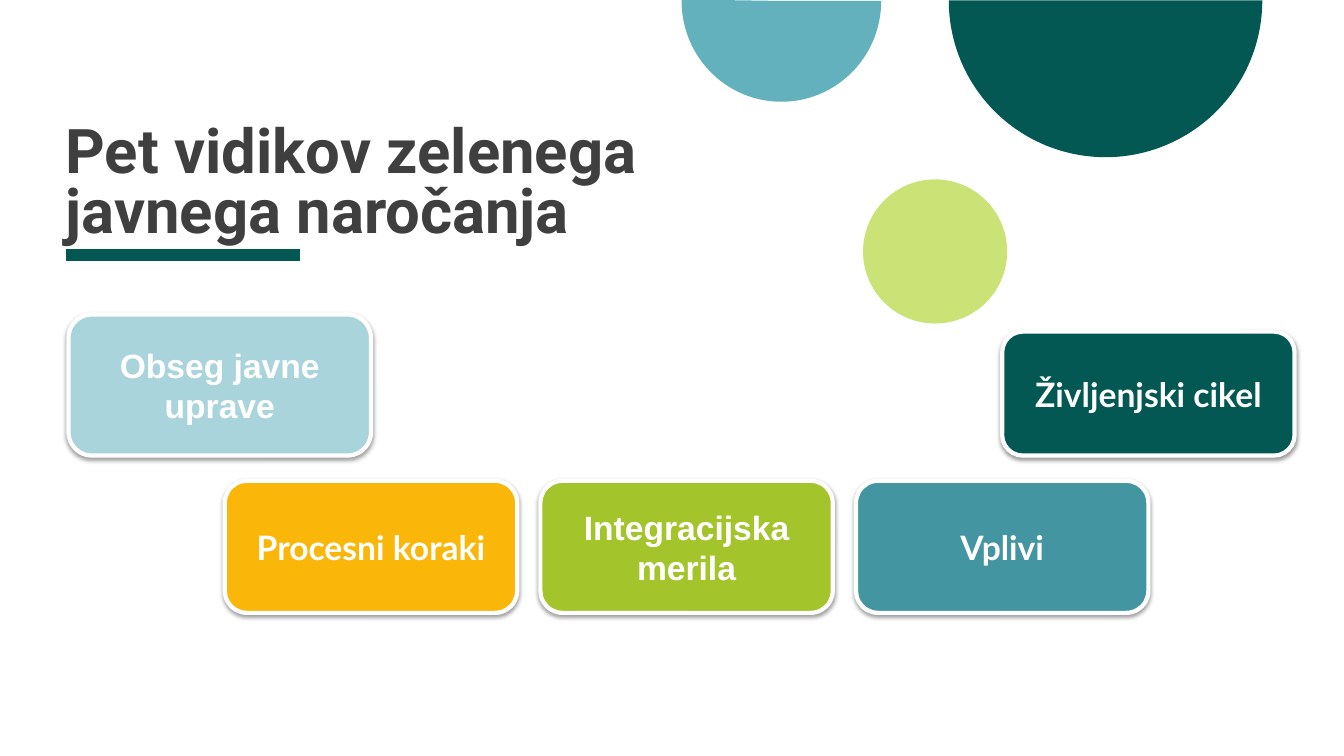
from dataclasses import dataclass

from lxml import etree
from pptx import Presentation
from pptx.dml.color import RGBColor
from pptx.enum.shapes import MSO_CONNECTOR, MSO_SHAPE
from pptx.enum.text import MSO_ANCHOR, MSO_AUTO_SIZE, PP_ALIGN
from pptx.oxml import parse_xml
from pptx.oxml.ns import qn
from pptx.util import Inches, Pt

PIE = MSO_SHAPE.PIE
ELLIPSE = MSO_SHAPE.OVAL
CARD = MSO_SHAPE.FLOWCHART_ALTERNATE_PROCESS
STRAIGHT = MSO_CONNECTOR.STRAIGHT
LEFT, CENTER = PP_ALIGN.LEFT, PP_ALIGN.CENTER
MIDDLE, BOTTOM = MSO_ANCHOR.MIDDLE, MSO_ANCHOR.BOTTOM
NO_AUTOFIT = MSO_AUTO_SIZE.NONE

WHITE = RGBColor(0xFF, 0xFF, 0xFF)
CHARCOAL = RGBColor(0x3F, 0x3F, 0x3F)
DARK_GREEN = RGBColor(0x03, 0x58, 0x54)
SKY = RGBColor(0x64, 0xB1, 0xBE)
LIME = RGBColor(0xCB, 0xE2, 0x77)
GREEN = RGBColor(0xA3, 0xC4, 0x2A)
TEAL = RGBColor(0x44, 0x95, 0xA2)
PALE_BLUE = RGBColor(0xA9, 0xD4, 0xDB)
AMBER = RGBColor(0xFA, 0xB6, 0x09)

ROW_LEFT, ROW_TOP, ROW_STEP = 2.23, 4.77, 3.13
CARD_WIDTH, CARD_HEIGHT = 2.9, 1.31

CARD_SHADOW = (
    '<a:outerShdw xmlns:a="http://schemas.openxmlformats.org/drawingml/2006/main" '
    'blurRad="40000" dist="20000" dir="5400000" rotWithShape="0">'
    '<a:srgbClr val="000000"><a:alpha val="38000"/></a:srgbClr></a:outerShdw>'
)


@dataclass(frozen=True)
class Disc:
    left: float
    top: float
    width: float
    height: float
    color: RGBColor
    kind: MSO_SHAPE = PIE
    sweep: float = 108


@dataclass(frozen=True)
class Aspect:
    label: str
    color: RGBColor
    font: str
    left: float
    top: float = ROW_TOP
    width: float = CARD_WIDTH
    height: float = CARD_HEIGHT


DISCS = (
    Disc(9.41, -1.55, 3.11, 3.11, DARK_GREEN),
    Disc(6.76, -0.99, 1.98, 2, SKY, sweep=108.52),
    Disc(8.56, 1.78, 1.43, 1.43, LIME, ELLIPSE),
)

ASPECTS = (
    Aspect("Obseg javne uprave", PALE_BLUE, "Arial", 0.68, 3.12, 3, 1.4),
    Aspect("Procesni koraki", AMBER, "Lato", ROW_LEFT),
    Aspect("Integracijska merila", GREEN, "Arial", ROW_LEFT + ROW_STEP),
    Aspect("Vplivi", TEAL, "Lato", ROW_LEFT + 2 * ROW_STEP),
    Aspect("Življenjski cikel", DARK_GREEN, "Lato", 9.94, 3.29, height=1.23),
)


def write_text(shape, text: str, *, font: str, size: float, color: RGBColor,
               align=CENTER, anchor=MIDDLE, margins=(0.1, 0.05),
               line_spacing: float = 1.0) -> None:
    frame = shape.text_frame
    frame.word_wrap = True
    frame.auto_size = NO_AUTOFIT
    frame.vertical_anchor = anchor
    frame.margin_left = frame.margin_right = Inches(margins[0])
    frame.margin_top = frame.margin_bottom = Inches(margins[1])
    para = frame.paragraphs[0]
    para.alignment = align
    para.line_spacing = line_spacing
    span = para.add_run()
    span.text = text
    span.font.name = font
    span.font.size = Pt(size)
    span.font.bold = True
    span.font.color.rgb = color


def add_filled_shape(page, kind: MSO_SHAPE, item: Disc | Aspect):
    shape = page.shapes.add_shape(kind, Inches(item.left), Inches(item.top),
                                  Inches(item.width), Inches(item.height))
    shape.shadow.inherit = False
    shape.fill.solid()
    shape.fill.fore_color.rgb = item.color
    return shape


def add_disc(page, disc: Disc) -> None:
    shape = add_filled_shape(page, disc.kind, disc)
    shape.line.fill.background()
    if disc.kind == PIE:
        shape.adjustments[0] = 0
        shape.adjustments[1] = disc.sweep


def add_aspect(page, aspect: Aspect) -> None:
    shape = add_filled_shape(page, CARD, aspect)
    shape.line.color.rgb = WHITE
    shape.line.width = Pt(3)
    effects = shape._element.spPr.find(qn("a:effectLst"))
    effects.append(parse_xml(CARD_SHADOW))
    write_text(shape, aspect.label, font=aspect.font, size=24, color=WHITE)


def add_title_rule(page) -> None:
    rule = page.shapes.add_connector(STRAIGHT, Inches(0.65), Inches(2.53),
                                     Inches(2.98), Inches(2.53))
    rule.line.color.rgb = DARK_GREEN
    rule.line.width = Pt(8)
    etree.SubElement(rule._element.spPr, qn("a:effectLst"))


def set_title(page) -> None:
    title = page.shapes.title
    title.left, title.top = Inches(0.65), Inches(1.84)
    title.width, title.height = Inches(6.59), Inches(0.59)
    write_text(title, "Pet vidikov zelenega javnega naročanja", font="Roboto",
               size=44, color=CHARCOAL, align=LEFT, anchor=BOTTOM,
               margins=(0, 0), line_spacing=0.8)


def main() -> None:
    deck = Presentation()
    deck.slide_width, deck.slide_height = Inches(13.33), Inches(7.5)
    page = deck.slides.add_slide(deck.slide_layouts[5])
    add_title_rule(page)
    for disc in DISCS:
        add_disc(page, disc)
    set_title(page)
    for aspect in ASPECTS:
        add_aspect(page, aspect)
    deck.save("out.pptx")


if __name__ == "__main__":
    main()
